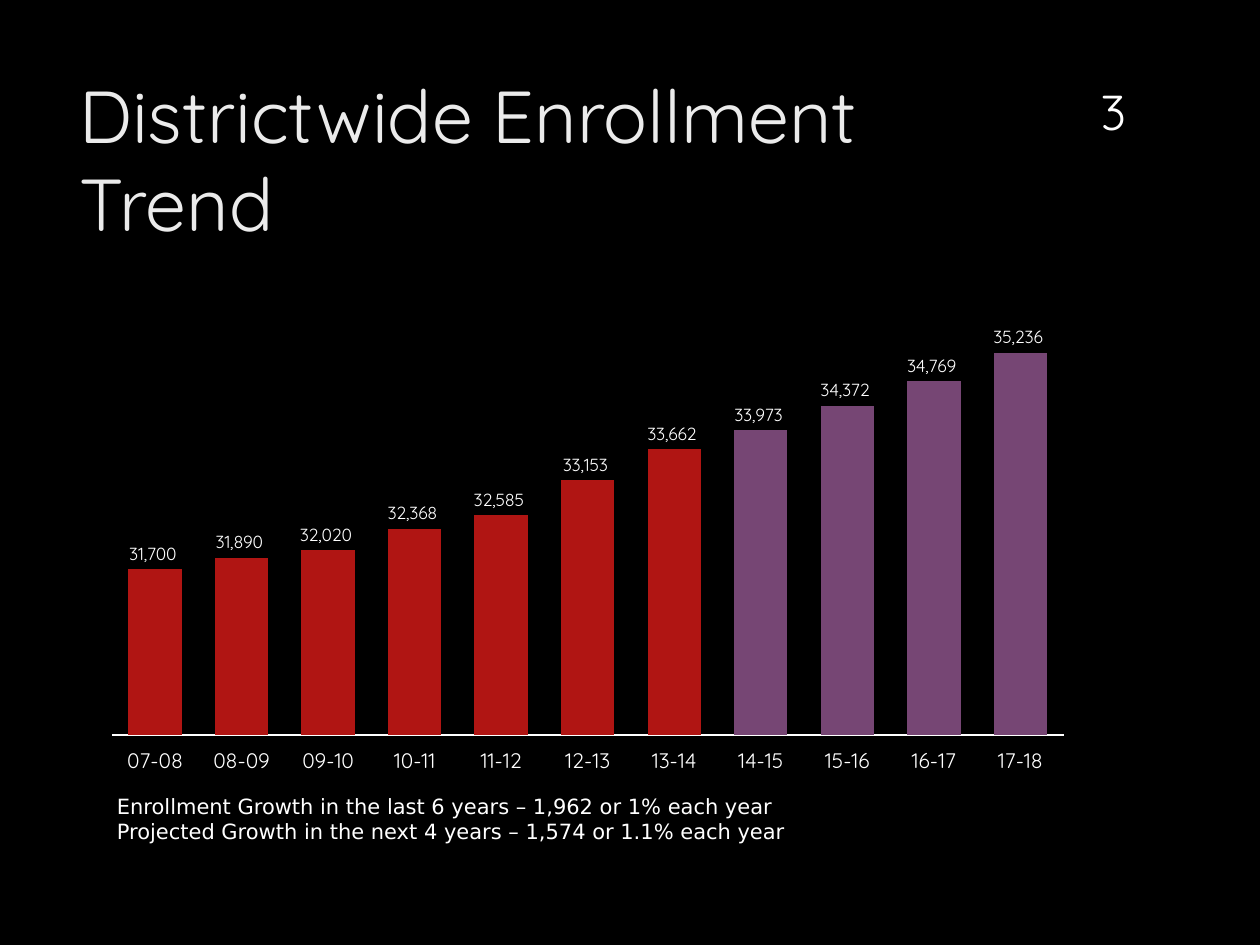
from lxml import etree
from pptx import Presentation
from pptx.chart.data import CategoryChartData
from pptx.dml.color import RGBColor
from pptx.enum.chart import XL_CHART_TYPE as ChartType, XL_LABEL_POSITION as LabelPosition
from pptx.enum.chart import XL_TICK_LABEL_POSITION as TickLabels, XL_TICK_MARK as TickMark
from pptx.enum.text import MSO_ANCHOR as Anchor, PP_ALIGN as Align
from pptx.oxml.ns import qn
from pptx.util import Inches, Pt

FONT = "Quicksand"
WHITE = "FFFFFF"
ACTUAL, PROJECTED = "B01513", "764674"
NUMBER_FORMAT = r"#,##0_);\(#,##0\)"

ACTUAL_ENROLLMENT = {
    "07-08": 31700, "08-09": 31890, "09-10": 32020, "10-11": 32368,
    "11-12": 32585, "12-13": 33153, "13-14": 33662,
}
PROJECTED_ENROLLMENT = {"14-15": 33973, "15-16": 34372, "16-17": 34769, "17-18": 35236}


def color(value):
    return RGBColor.from_string(value)


def fill(target, value):
    target.fill.solid()
    target.fill.fore_color.rgb = color(value)


def set_font(font, size, value=WHITE, name=FONT):
    font.size, font.name = Pt(size), name
    font.color.rgb = color(value)


def add_text(slide, box, text, size, value=WHITE, name=FONT,
             align=Align.LEFT, anchor=Anchor.TOP):
    shape = slide.shapes.add_textbox(*map(Inches, box))
    frame = shape.text_frame
    frame.word_wrap = True
    frame.vertical_anchor = anchor
    frame.text = text
    for paragraph in frame.paragraphs:
        paragraph.alignment = align
        for run in paragraph.runs:
            set_font(run.font, size, value, name)
    return shape


def set_plot_layout(chart, **fractions):
    """Fix the inner plot area as fractions of the chart."""
    plot_area = chart.plots[0]._element.getparent()
    layout = plot_area.find(qn("c:layout"))
    if layout is None:
        layout = etree.Element(qn("c:layout"))
        plot_area.insert(0, layout)
    manual = etree.SubElement(layout, qn("c:manualLayout"))
    settings = {"layoutTarget": "inner", "xMode": "edge", "yMode": "edge", **fractions}
    for tag, value in settings.items():
        etree.SubElement(manual, qn(f"c:{tag}")).set("val", str(value))


def add_enrollment_chart(slide, box):
    enrollment = {**ACTUAL_ENROLLMENT, **PROJECTED_ENROLLMENT}
    data = CategoryChartData(number_format=NUMBER_FORMAT)
    data.categories = list(enrollment)
    data.add_series("Series 1", list(enrollment.values()))
    chart = slide.shapes.add_chart(
        ChartType.COLUMN_CLUSTERED, *map(Inches, box), data).chart
    chart.has_legend = False
    chart.has_title = False
    set_font(chart.font, 10)
    set_plot_layout(chart, x=0.02, y=0.02, w=0.96, h=0.89)

    # Axes
    years = chart.category_axis
    years.major_tick_mark = years.minor_tick_mark = TickMark.NONE
    years.tick_label_position = TickLabels.LOW
    set_font(years.tick_labels.font, 12)
    years.format.line.color.rgb = color(WHITE)
    years.format.line.width = Pt(0.75)
    values = chart.value_axis
    values.minimum_scale, values.maximum_scale = 29000, 36000
    values.has_major_gridlines = False
    values.visible = False

    # Columns: actual years, then projected years
    plot = chart.plots[0]
    plot.gap_width, plot.overlap = 62, -27
    plot.vary_by_categories = False
    series = plot.series[0]
    fill(series.format, ACTUAL)
    for index in range(len(ACTUAL_ENROLLMENT), len(enrollment)):
        fill(series.points[index].format, PROJECTED)

    # Value labels
    labels = series.data_labels
    labels.show_value = True
    labels.position = LabelPosition.OUTSIDE_END
    labels.number_format = NUMBER_FORMAT
    labels.number_format_is_linked = False
    set_font(labels.font, 10)


def add_header(slide, box):
    left, top, width, height = box
    title_width, number_width = 7.72, 0.69
    add_text(slide, (left, top + 0.17, title_width, height - 0.17),
             "Districtwide Enrollment Trend", 42, value="EBEBEB", anchor=Anchor.MIDDLE)
    add_text(slide, (left + width - number_width, top, number_width, 0.84),
             "3", 28, align=Align.CENTER, anchor=Anchor.BOTTOM)


def add_growth_notes(slide, box):
    notes = ("Enrollment Growth in the last 6 years – 1,962 or 1% each year",
             "Projected Growth in the next 4 years – 1,574 or 1.1% each year")
    add_text(slide, box, "\n".join(notes), 12, name="DejaVu Sans")


def main():
    presentation = Presentation()
    presentation.slide_width, presentation.slide_height = Inches(10), Inches(7.5)
    slide = presentation.slides.add_slide(presentation.slide_layouts[6])
    fill(slide.background, "000000")
    add_header(slide, (0.53, 0.32, 8.65, 1.7))
    add_enrollment_chart(slide, (0.73, 2.35, 7.87, 3.83))
    add_growth_notes(slide, (0.83, 6.25, 7.83, 0.5))
    presentation.save("out.pptx")


if __name__ == "__main__":
    main()
